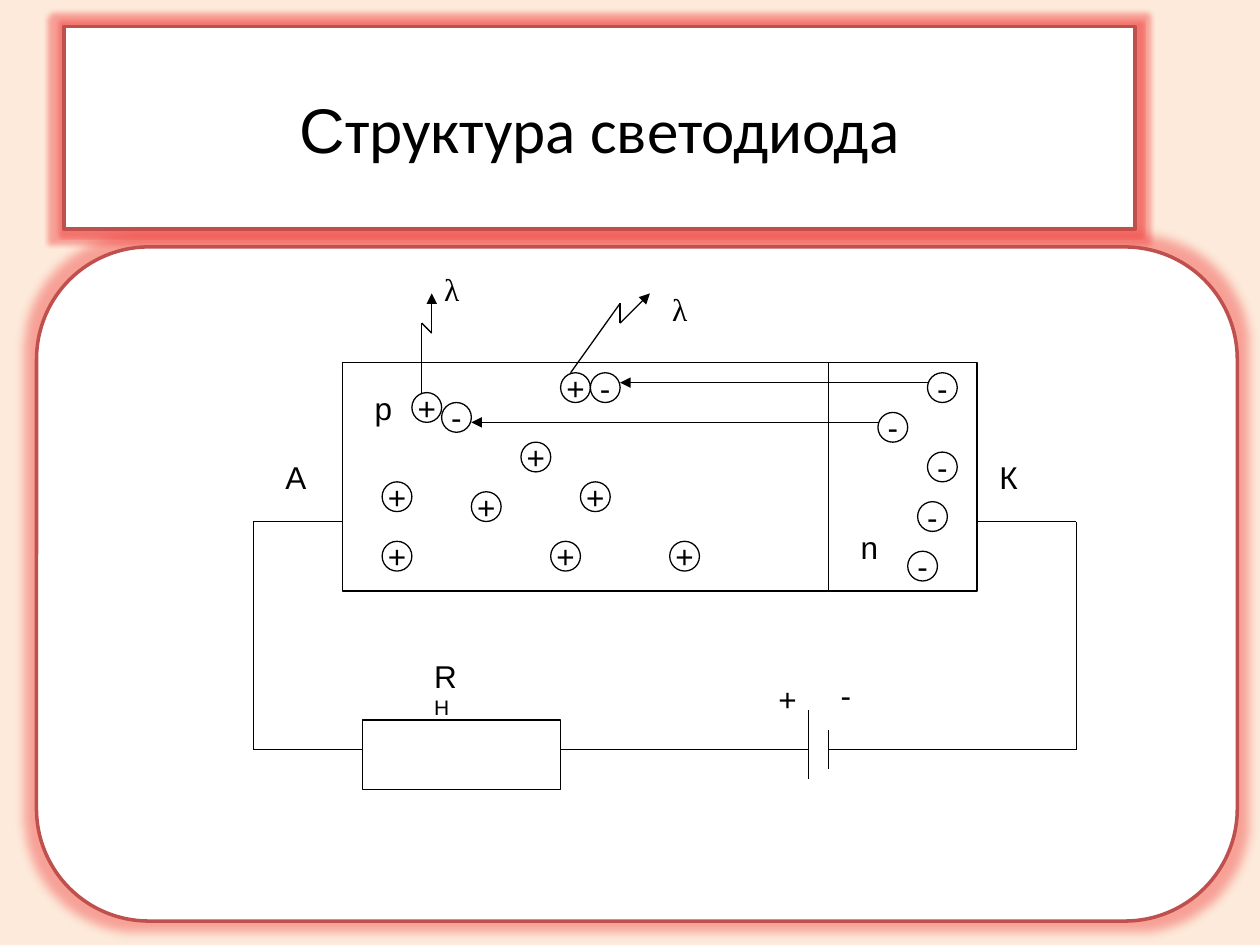
from lxml import etree
from pptx import Presentation
from pptx.dml.color import RGBColor
from pptx.enum.shapes import MSO_CONNECTOR, MSO_SHAPE as SHAPE
from pptx.enum.text import MSO_ANCHOR as ANCHOR, PP_ALIGN as ALIGN
from pptx.oxml.ns import qn
from pptx.util import Inches, Pt

# Drawing grid: columns start at the left wire, rows at the top of the crystal
STEP, LEFT, TOP = 0.0787, 2.01, 2.88
BLACK, WHITE, RED, GLOW = "000000", "FFFFFF", "C0504D", "EE3130"
DOT = 3  # diameter of a charge carrier in grid steps

HOLES = [(16, 3), (31, 1), (27, 8), (13, 12), (22, 13), (33, 12),
         (13, 18), (30, 18), (42, 18)]
ELECTRONS = [(19, 4), (34, 1), (68, 1), (63, 5), (68, 9), (67, 14), (66, 19)]
WIRES = [[(9, 16), (0, 16), (0, 39), (56, 39)],
         [(73, 16), (83, 16), (83, 39), (58, 39)],
         [(58, 0), (58, 23)],      # p-n junction
         [(56, 35), (56, 42)],     # battery plates
         [(58, 37), (58, 41)]]
ARROWS = [[(63, 6), (22, 6)],
          [(68, 2), (37, 2)],
          [(17, 3), (17, -4), (18, -3), (18, -7)],
          [(32, 1), (37, -6), (37, -4), (40, -7)]]
LABELS = [("+", 51.7, 31.4), ("-", 58, 31), ("А", 2, 9), ("К", 74, 9),
          ("p", 11, 2), ("n", 60, 16)]
LAMBDAS = [(18, -10), (41, -8)]


def rgb(value):
    return RGBColor.from_string(value)


def x(col):
    return Inches(LEFT + col * STEP)


def y(row):
    return Inches(TOP + row * STEP)


def box(col, row, cols, rows):
    return x(col), y(row), Inches(cols * STEP), Inches(rows * STEP)


def write(sp, runs, align=ALIGN.LEFT, **frame):
    """Put (text, size, font) runs into a shape."""
    tf = sp.text_frame
    for name, value in frame.items():
        setattr(tf, name, value)
    p = tf.paragraphs[0]
    p.alignment = align
    for text, size, font in runs:
        r = p.add_run()
        r.text = text
        for name, value in {"size": Pt(size), "name": font}.items():
            setattr(r.font, name, value)
        r.font.color.rgb = rgb(BLACK)


def add_block(s, kind, area, line=BLACK, width=0.75, glow=0):
    sp = s.shapes.add_shape(kind, *area)
    sp.shadow.inherit = False
    sp.fill.solid()
    sp.fill.fore_color.rgb = rgb(WHITE)
    sp.line.color.rgb = rgb(line)
    sp.line.width = Pt(width)
    if glow:
        effects = sp._element.spPr.find(qn("a:effectLst"))
        halo = etree.SubElement(effects, qn("a:glow"), rad=str(Pt(glow)))
        color = etree.SubElement(halo, qn("a:srgbClr"), val=GLOW)
        etree.SubElement(color, qn("a:alpha"), val="40000")
    return sp


def add_path(s, points, arrow=False):
    """Join grid points by straight lines, with an arrowhead on the last."""
    for start, end in zip(points, points[1:]):
        c = s.shapes.add_connector(MSO_CONNECTOR.STRAIGHT, x(start[0]),
                                   y(start[1]), x(end[0]), y(end[1]))
        c.line.color.rgb = rgb(BLACK)
        c.line.width = Pt(0.75)
        spPr = c._element.spPr
        etree.SubElement(spPr, qn("a:effectLst"))
        if arrow and end == points[-1]:
            etree.SubElement(spPr.find(qn("a:ln")), qn("a:tailEnd"),
                             type="triangle")


def add_carrier(s, sign, col, row):
    sp = add_block(s, SHAPE.OVAL, box(col, row, DOT, DOT))
    write(sp, [(sign, 18, "Arial")], ALIGN.CENTER, word_wrap=False,
          vertical_anchor=ANCHOR.MIDDLE)


def add_label(s, runs, col, row):
    sp = s.shapes.add_textbox(*box(col, row, 4.4, 5.1))
    write(sp, runs, word_wrap=False)


def main():
    prs = Presentation()
    prs.slide_width, prs.slide_height = Inches(10), Inches(7.5)
    s = prs.slides.add_slide(prs.slide_layouts[6])
    s.background.fill.solid()
    s.background.fill.fore_color.rgb = rgb("FDEADA")

    # Title and panel
    title = add_block(s, SHAPE.RECTANGLE, map(Inches, (0.51, 0.21, 8.5, 1.61)),
                      RED, 2, glow=5)
    write(title, [("С", 36, "Arial"), ("труктура светодиода", 36, "Calibri")],
          ALIGN.CENTER, word_wrap=True, vertical_anchor=ANCHOR.MIDDLE)
    add_block(s, SHAPE.ROUNDED_RECTANGLE,
              map(Inches, (0.29, 1.96, 9.53, 5.35)), RED, 2, glow=11)

    # Crystal, circuit and load resistor
    add_block(s, SHAPE.RECTANGLE, box(9, 0, 64, 23))
    for points in WIRES:
        add_path(s, points)
    add_block(s, SHAPE.RECTANGLE, box(11, 36, 20, 7))

    # Charge carriers, their drift and the emitted light
    for sign, places in (("+", HOLES), ("-", ELECTRONS)):
        for col, row in places:
            add_carrier(s, sign, col, row)
    for points in ARROWS:
        add_path(s, points, arrow=True)

    # Labels
    add_label(s, [("R", 18, "Arial"), ("H", 12, "Arial")], 17, 29)
    for text, col, row in LABELS:
        add_label(s, [(text, 18, "Arial")], col, row)
    for col, row in LAMBDAS:
        add_label(s, [("λ", 18, "Times New Roman")], col, row)

    prs.save("out.pptx")


if __name__ == "__main__":
    main()
